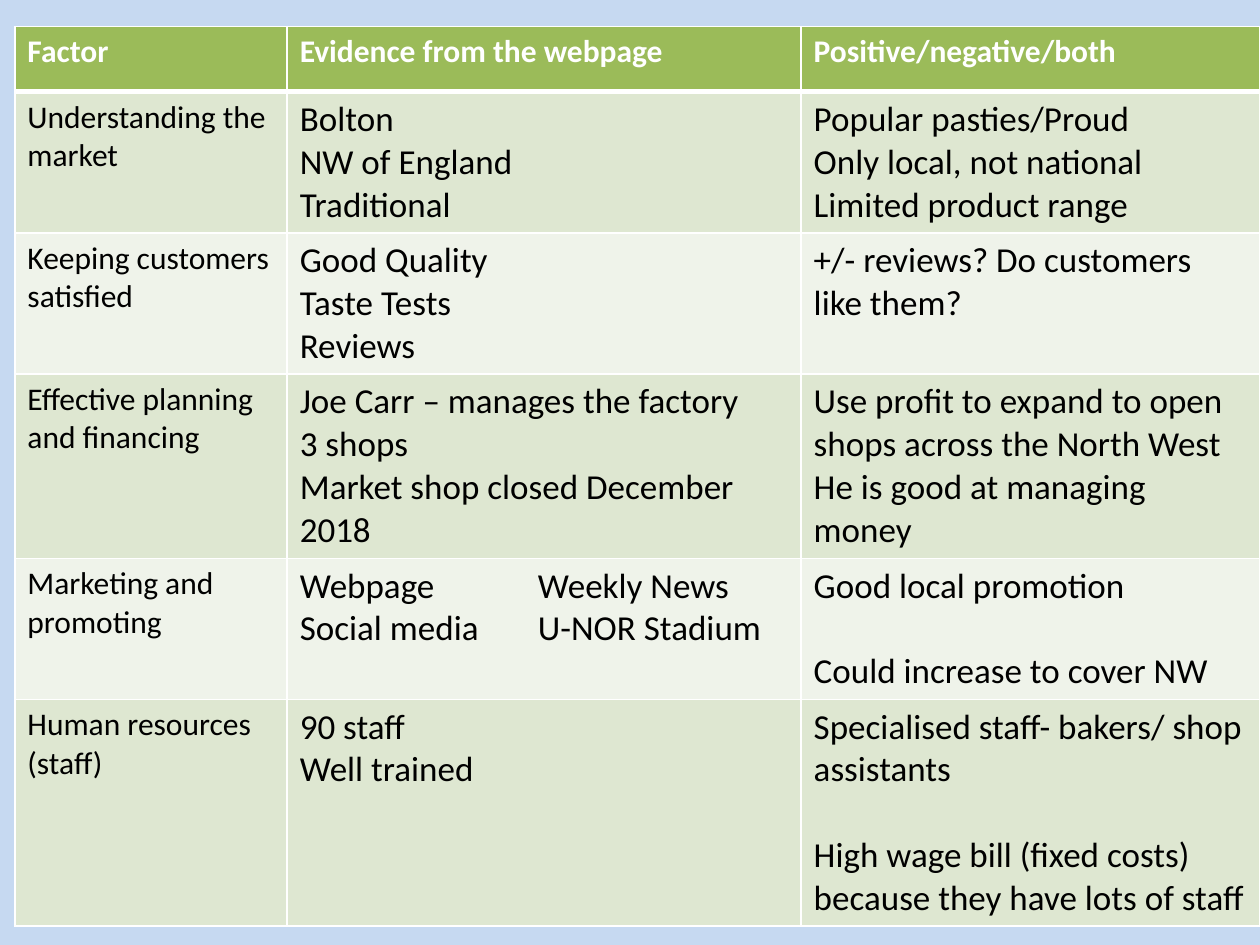
from lxml import etree
from pptx import Presentation
from pptx import util as u
from pptx.dml.color import RGBColor
from pptx.oxml import ns

COLOURS = {
    "background": "C6D9F1",
    "header": "9BBB59",
    "odd": "DEE7D1",
    "even": "EFF3EA",
    "white": "FFFFFF",
    "black": "000000",
}
COLUMN_WIDTHS = [5.49, 10.36, 9.25]
ROW_HEIGHTS = [1.32, 2.84, 2.84, 3.71, 2.84, 4.57]
TAB_STOP = u.Cm(4.8)
BLANK_LINE = u.Pt(24.4)

# Each cell is a list of paragraphs; GAP before a text leaves one line of space above it.
GAP = "^"
ROWS = [
    [["Factor"], ["Evidence from the webpage"], ["Positive/negative/both"]],
    [["Understanding the market"],
     ["Bolton", "NW of England", "Traditional"],
     ["Popular pasties/Proud", "Only local, not national", "Limited product range"]],
    [["Keeping customers satisfied"],
     ["Good Quality", "Taste Tests", "Reviews"],
     ["+/- reviews? Do customers like them?"]],
    [["Effective planning and financing"],
     ["Joe Carr – manages the factory", "3 shops", "Market shop closed December 2018"],
     ["Use profit to expand to open shops across the North West",
      "He is good at managing money"]],
    [["Marketing and promoting"],
     ["Webpage\tWeekly News", "Social media\tU-NOR Stadium"],
     ["Good local promotion", GAP + "Could increase to cover NW"]],
    [["Human resources (staff)"],
     ["90 staff", "Well trained"],
     ["Specialised staff- bakers/ shop assistants",
      GAP + "High wage bill (fixed costs) because they have lots of staff"]],
]


def set_borders(cell, widths):
    """Draw white borders; widths maps a side (L, R, T, B) to points."""
    properties = cell._tc.get_or_add_tcPr()
    for side, width in widths.items():
        line = etree.SubElement(properties, ns.qn(f"a:ln{side}"), w=str(u.Pt(width)))
        fill = etree.SubElement(line, ns.qn("a:solidFill"))
        etree.SubElement(fill, ns.qn("a:srgbClr"), val=COLOURS["white"])


def add_tab_stop(paragraph, position):
    properties = paragraph._p.get_or_add_pPr()
    tabs = etree.SubElement(properties, ns.qn("a:tabLst"))
    etree.SubElement(tabs, ns.qn("a:tab"), pos=str(position), algn="l")


presentation = Presentation()
presentation.slide_width = u.Cm(25.4)
presentation.slide_height = u.Cm(19.05)
slide = presentation.slides.add_slide(presentation.slide_layouts[6])
slide.background.fill.solid()
slide.background.fill.fore_color.rgb = RGBColor.from_string(COLOURS["background"])

table = slide.shapes.add_table(
    len(ROWS), len(COLUMN_WIDTHS), u.Cm(0.3), u.Cm(0.53),
    u.Cm(sum(COLUMN_WIDTHS)), u.Cm(sum(ROW_HEIGHTS))).table
for column, width in zip(table.columns, COLUMN_WIDTHS):
    column.width = u.Cm(width)
for row, height in zip(table.rows, ROW_HEIGHTS):
    row.height = u.Cm(height)

for row_index, row_texts in enumerate(ROWS):
    is_header = row_index == 0
    fill_name = "header" if is_header else ("even", "odd")[row_index % 2]
    for column_index, texts in enumerate(row_texts):
        cell = table.cell(row_index, column_index)
        set_borders(cell, {"L": 1, "R": 1,
                           "T": 3 if row_index == 1 else 1,
                           "B": 3 if is_header else 1})
        cell.fill.solid()
        cell.fill.fore_color.rgb = RGBColor.from_string(COLOURS[fill_name])

        for index, text in enumerate(texts):
            frame = cell.text_frame
            paragraph = frame.paragraphs[0] if index == 0 else frame.add_paragraph()
            if text.startswith(GAP):
                paragraph.space_before = BLANK_LINE
            if "\t" in text:
                add_tab_stop(paragraph, TAB_STOP)
            run = paragraph.add_run()
            run.text = text.removeprefix(GAP)
            run.font.name = "Calibri"
            run.font.size = u.Pt(18 if is_header or column_index == 0 else 20)
            run.font.bold = is_header
            run.font.color.rgb = RGBColor.from_string(
                COLOURS["white" if is_header else "black"])

presentation.save("out.pptx")
